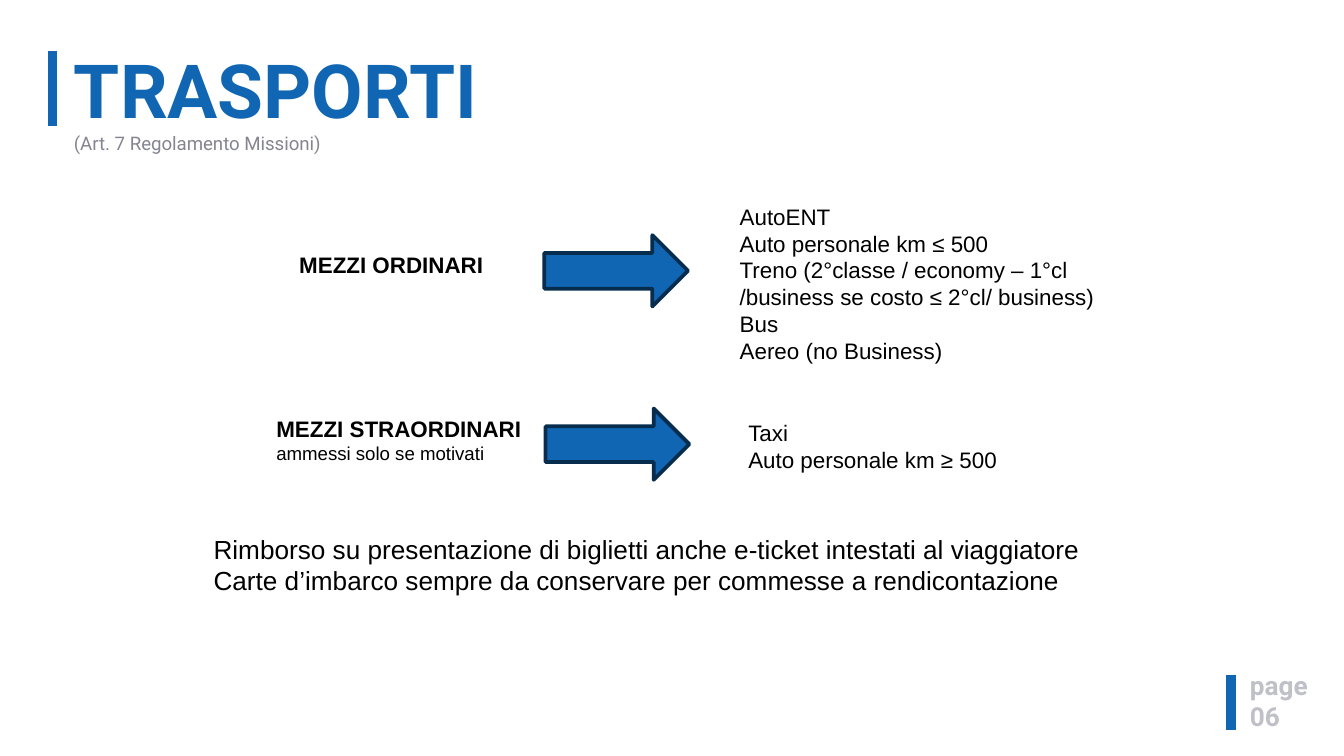
from lxml.etree import SubElement
from pptx import Presentation
from pptx.dml.color import RGBColor
from pptx.enum.shapes import MSO_CONNECTOR, MSO_SHAPE
from pptx.oxml.ns import qn
from pptx.util import Pt

BLUE, NAVY, BLACK = "1166B3", "072D4E", "000000"
GREY, PALE_GREY = "858591", "C0C0C8"


def paint(color_format, color):
    color_format.rgb = RGBColor.from_string(color)


def add_text(position, lines, font="Arial", color=BLACK, inset=(7.2, 3.6), wrap=True):
    """Add a text box with one paragraph for each (text, size, bold) line."""
    box = slide.shapes.add_textbox(*map(Pt, position))
    frame = box.text_frame
    frame.word_wrap = wrap
    frame.margin_left = frame.margin_right = Pt(inset[0])
    frame.margin_top = frame.margin_bottom = Pt(inset[1])
    for index, (text, size, bold) in enumerate(lines):
        para = frame.add_paragraph() if index else frame.paragraphs[0]
        span = para.add_run()
        span.text = text
        span.font.name = font
        span.font.size = Pt(size)
        span.font.bold = bold
        paint(span.font.color, color)
    return frame


deck = Presentation()
deck.slide_width, deck.slide_height = Pt(720), Pt(405)
slide = deck.slides.add_slide(deck.slide_layouts[6])

# Accent bars beside the title and the page number
for x, top, bottom in [(28, 27.2, 67.6), (659.5, 361.6, 391.2)]:
    bar = slide.shapes.add_connector(MSO_CONNECTOR.STRAIGHT, Pt(x), Pt(top), Pt(x), Pt(bottom))
    paint(bar.line.color, BLUE)
    bar.line.width = Pt(5)
    SubElement(bar.element.spPr, qn("a:effectLst"))

# Title with its subtitle on a second line
title = add_text((36, 27.4, 579, 58.3), [("TRASPORTI", 40, True)], "Roboto", BLUE, (3.6, 1.44))
title_para = title.paragraphs[0]
title_para.line_spacing = 0.9
title_para.add_line_break()
subtitle = title_para.add_run()
subtitle.text = "(Art. 7 Regolamento Missioni)"
subtitle.font.name = "Roboto"
subtitle.font.size = Pt(10)
subtitle.font.bold = False
paint(subtitle.font.color, GREY)

add_text((666, 357.2, 68.4, 37.4), [("page", 14, True), ("06", 14, True)],
         "Roboto", PALE_GREY, (3.6, 1.44))

# Kinds of transport, and what each one covers
add_text((153.2, 131, 116.6, 21.6), [("MEZZI ORDINARI", 12, True)])
add_text((141, 218.9, 156.2, 33.8),
         [("MEZZI STRAORDINARI", 12, True), ("ammessi solo se motivati", 10, False)])

ordinary = [
    "AutoENT",
    "Auto personale km ≤ 500",
    "Treno (2°classe / economy – 1°cl /business se costo ≤ 2°cl/ business)",
    "Bus",
    "Aereo (no Business)",
]
extraordinary = ["Taxi", "Auto personale km ≥ 500"]
for position, items in [((389.2, 105.1, 242.6, 94.3), ordinary),
                        ((393.8, 221, 188.6, 36), extraordinary)]:
    add_text(position, [(item, 12, False) for item in items])

for left, top in [(291.6, 126), (292.3, 218.9)]:
    arrow = slide.shapes.add_shape(MSO_SHAPE.RIGHT_ARROW, Pt(left), Pt(top), Pt(77), Pt(38.2))
    arrow.shadow.inherit = False
    arrow.fill.solid()
    paint(arrow.fill.fore_color, BLUE)
    paint(arrow.line.color, NAVY)
    arrow.line.width = Pt(2)

# Refund rules
refund_rules = [
    "Rimborso su presentazione di biglietti anche e-ticket intestati al viaggiatore",
    "Carte d’imbarco sempre da conservare per commesse a rendicontazione",
]
add_text((107.3, 282.2, 481, 41), [(rule, 14, False) for rule in refund_rules], wrap=False)

deck.save("out.pptx")
